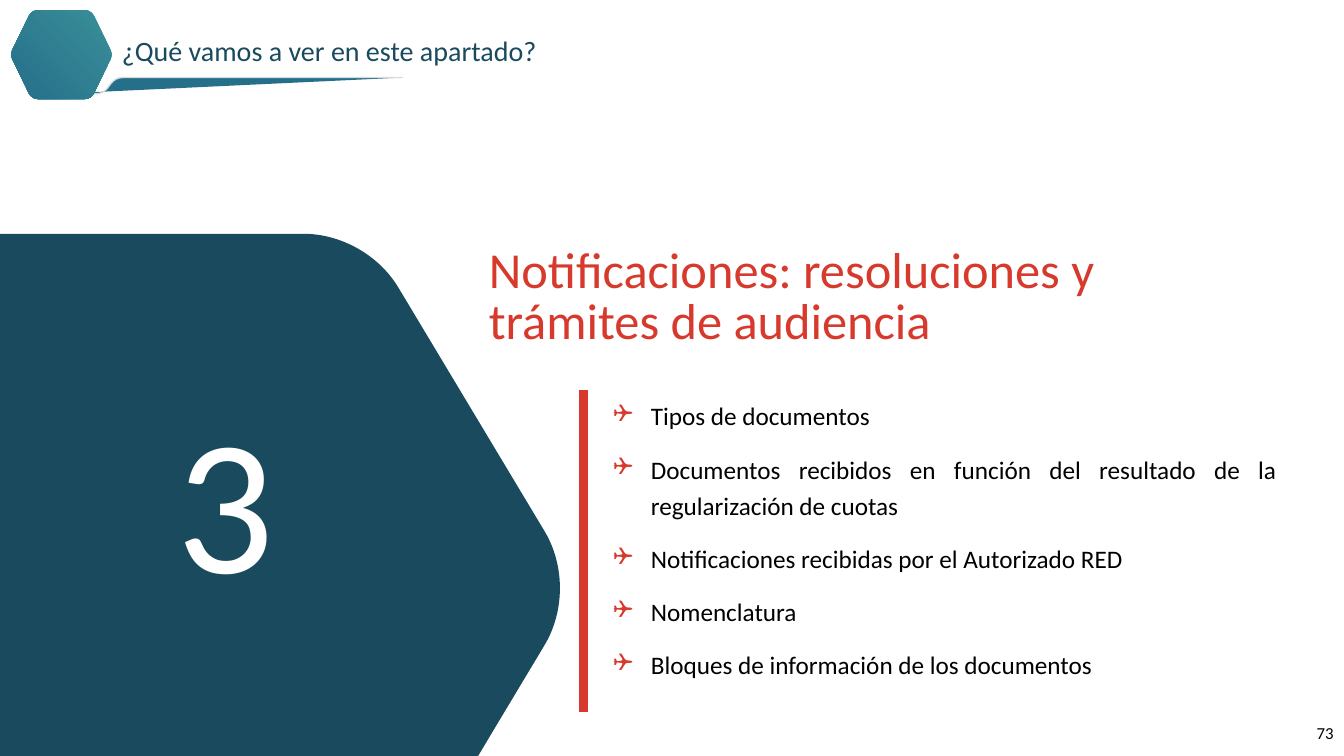
from math import hypot
from lxml.etree import SubElement
from pptx import Presentation
from pptx.dml.color import RGBColor
from pptx.enum.text import MSO_ANCHOR, MSO_AUTO_SIZE, PP_ALIGN
from pptx.oxml.ns import qn
from pptx.util import Pt

# Content
HEAD = "¿Qué vamos a ver en este apartado?"
TITLE = "Notificaciones: resoluciones y trámites de audiencia"
PART = "3"
PAGE = "73"
TOPICS = [
    "Tipos de documentos",
    "Documentos recibidos en función del resultado de la regularización de cuotas",
    "Notificaciones recibidas por el Autorizado RED",
    "Nomenclatura",
    "Bloques de información de los documentos",
]

THEME = {
    "font": "Calibri", "sign": "Wingdings",
    "navy": "194A5D", "blue": "266F8B", "teal": "398F98",
    "red": "D73A2C", "grey": "D9D9D9", "white": "FFFFFF", "black": "000000",
    "page": 12, "body": 18, "head": 20, "title": 36, "part": 138,
}

# Outlines: corners as x, y and the length cut off to round them
HEX = [(43.9 + side * x, 39 + side * y, cut)
       for side in (1, -1)
       for x, y, cut in [(21.3, -31.8, 4.6), (36.7, 0, 3.3), (21.3, 31.8, 4.6)]]
SWOOSH = [(41.8, 67, 0), (73.8, 67, 5), (82.4, 55.4, 5), (288, 55.4, 0)]
PANEL = [(341.5, 540, 0), (0, 540, 0), (0, 167, 0),
         (261.5, 167, 44.6), (413.4, 420.1, 47.5)]
PULL = 0.4  # share of the cut left between curve handle and corner


def tone(name):
    return RGBColor.from_string(THEME[name])


def toward(start, end, dist):
    dx, dy = end[0] - start[0], end[1] - start[1]
    part = dist / hypot(dx, dy)
    return start[0] + dx * part, start[1] + dy * part


def trace(corners):
    """Return the outline's points, and where each curve starts in them."""
    dots, bends = [], []
    for i, (x, y, cut) in enumerate(corners):
        if not cut:
            dots.append((x, y))
            continue
        prior, after = corners[i - 1], corners[(i + 1) % len(corners)]
        bends.append(len(dots))
        dots += [toward((x, y), prior, cut), toward((x, y), prior, cut * PULL),
                 toward((x, y), after, cut * PULL), toward((x, y), after, cut)]
    return dots, bends


def draw(slide, corners, color, line=None, close=True):
    dots, bends = trace(corners)
    dots = [(Pt(x), Pt(y)) for x, y in dots]
    pen = slide.shapes.build_freeform(*dots[0], scale=1.0)
    pen.add_line_segments(dots[1:], close=close)
    shape = pen.convert_to_shape()
    # Join the three points of each bend into one cubic curve
    legs = list(shape.element.iter(qn("a:lnTo")))
    for at in bends:
        curve = legs[at].makeelement(qn("a:cubicBezTo"))
        legs[at].addprevious(curve)
        for leg in legs[at:at + 3]:
            curve.append(leg[0])
            leg.getparent().remove(leg)
    shape.shadow.inherit = False
    shape.fill.solid()
    shape.fill.fore_color.rgb = tone(color)
    if line:
        shape.line.color.rgb = tone(line)
        shape.line.width = Pt(1)
    else:
        shape.line.fill.background()
    return shape


def glow(shape, first, last):
    """Fill with a round gradient that starts at the lower left."""
    shape.fill.gradient()
    for stop, name, pos in zip(shape.fill.gradient_stops, (first, last), (0, 1)):
        stop.color.rgb = tone(name)
        stop.position = pos
    grad = shape.element.spPr.find(qn("a:gradFill"))
    grad.remove(grad.find(qn("a:lin")))
    ring = SubElement(grad, qn("a:path"), path="circle")
    SubElement(ring, qn("a:fillToRect"), t="100000", r="100000")


def mark(para, color):
    props = para._p.get_or_add_pPr()
    props.set("marL", str(Pt(27)))
    props.set("indent", str(Pt(-27)))
    SubElement(SubElement(props, qn("a:buClr")), qn("a:srgbClr"), val=THEME[color])
    SubElement(props, qn("a:buFont"), typeface=THEME["sign"])
    SubElement(props, qn("a:buChar"), char="❑")


def write(slide, text, box, size, color, align=PP_ALIGN.LEFT, space=None,
          before=0, after=0, pad=(7.2, 3.6), anchor=MSO_ANCHOR.TOP,
          bullet=None, fit=MSO_AUTO_SIZE.NONE):
    frame = slide.shapes.add_textbox(*map(Pt, box)).text_frame
    frame.word_wrap = True
    frame.auto_size = fit
    frame.vertical_anchor = anchor
    frame.margin_left = frame.margin_right = Pt(pad[0])
    frame.margin_top = frame.margin_bottom = Pt(pad[1])
    for i, item in enumerate([text] if isinstance(text, str) else text):
        para = frame.add_paragraph() if i else frame.paragraphs[0]
        if bullet:
            mark(para, bullet)
        para.alignment = align
        para.line_spacing = space
        para.space_before = Pt(before if i else 0)
        para.space_after = Pt(after)
        run = para.add_run()
        run.text = item
        run.font.name = THEME["font"]
        run.font.size = Pt(THEME[size])
        run.font.color.rgb = tone(color)


def main():
    deck = Presentation()
    deck.slide_width, deck.slide_height = Pt(960), Pt(540)
    slide = deck.slides.add_slide(deck.slide_layouts[6])
    tight = {"space": 0.85, "after": 6}
    wide = (9.4, 5)

    # Header
    write(slide, HEAD, (79.9, 24.2, 833.8, 28.1), "head", "navy",
          fit=MSO_AUTO_SIZE.SHAPE_TO_FIT_TEXT, **tight)
    draw(slide, SWOOSH, "blue", line="grey", close=False)
    glow(draw(slide, HEX, "blue"), "blue", "teal")

    # Page number
    write(slide, PAGE, (743.8, 509, 216, 28.8), "page", "black",
          align=PP_ALIGN.RIGHT, anchor=MSO_ANCHOR.MIDDLE)

    # Section title and number panel
    write(slide, TITLE, (339.8, 171.4, 562.3, 77.8), "title", "red",
          pad=wide, **tight)
    draw(slide, PANEL, "navy")
    write(slide, PART, (82.8, 292.3, 156.2, 155.5), "part", "white",
          align=PP_ALIGN.CENTER, pad=wide, **tight)

    # Topics beside the red rule
    rule = slide.shapes.add_connector(1, Pt(416.7), Pt(278.8), Pt(416.7), Pt(508.3))
    rule.line.color.rgb = tone("red")
    rule.line.width = Pt(6)
    SubElement(rule._element.spPr, qn("a:effectLst"))
    write(slide, TOPICS, (430.8, 282, 488.2, 146.9), "body", "black",
          align=PP_ALIGN.JUSTIFY, space=1.2, before=6, after=6,
          pad=(7.2, 0), bullet="red")

    deck.save("out.pptx")


if __name__ == "__main__":
    main()
